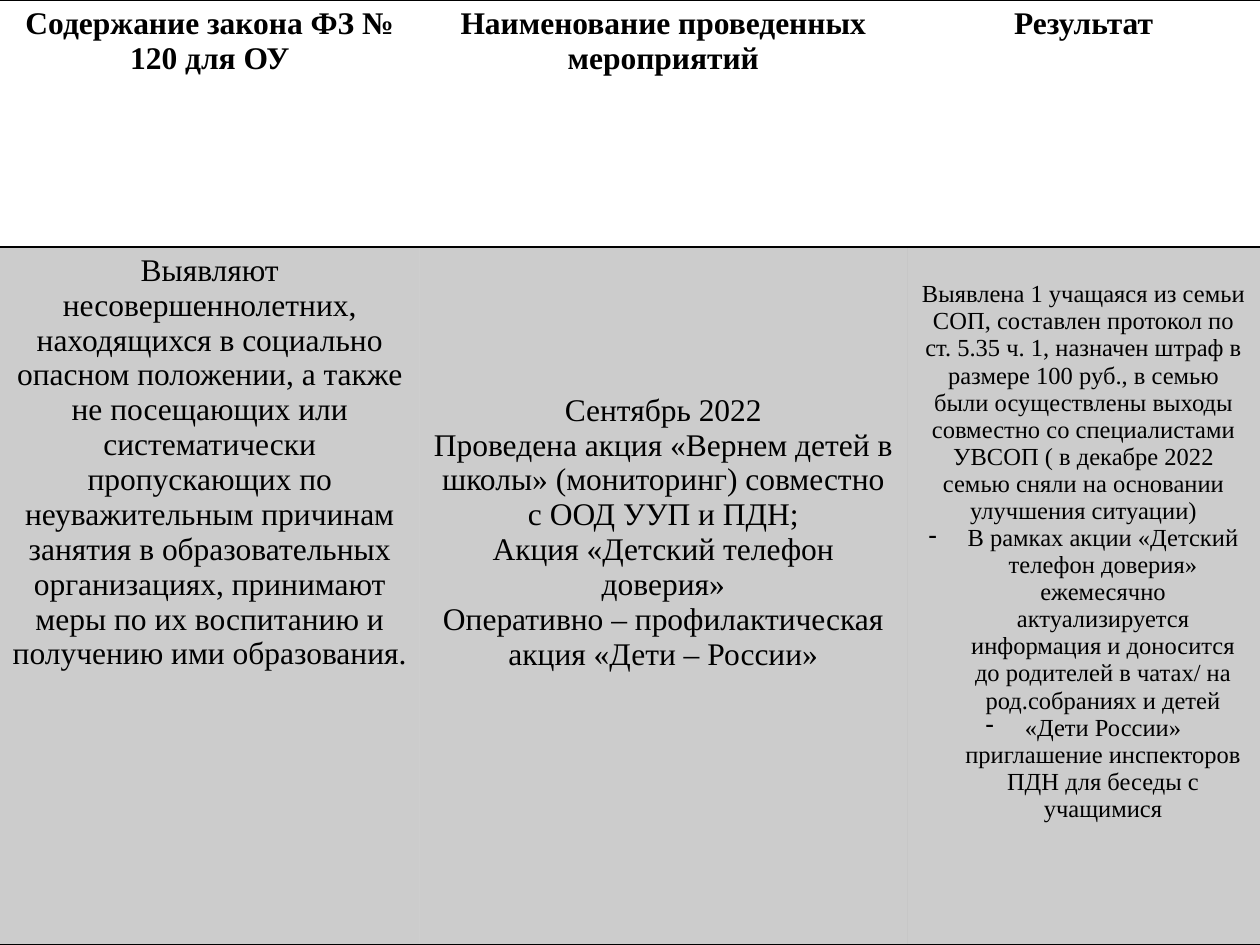
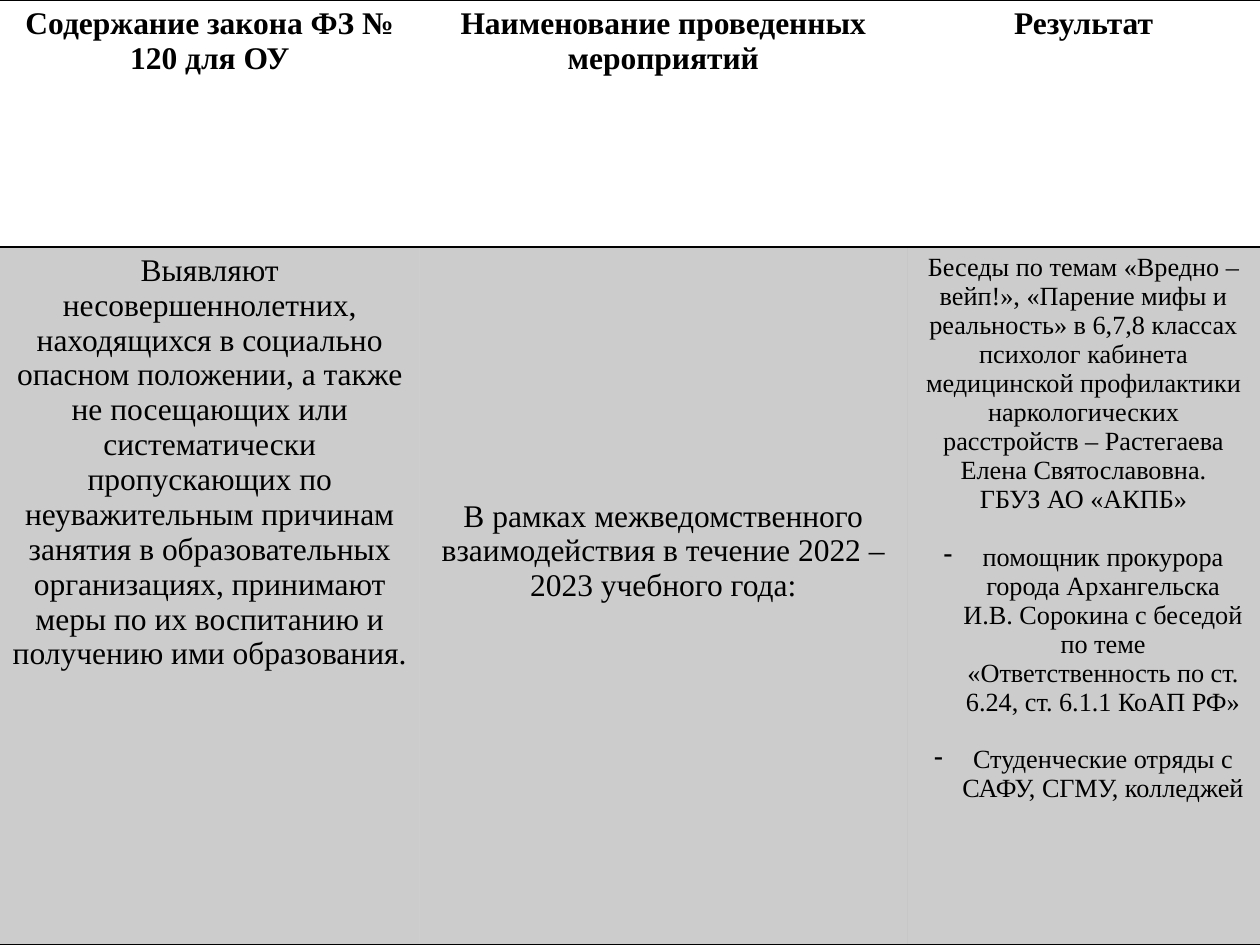
from lxml import etree
from pptx import Presentation
from pptx.dml.color import RGBColor
from pptx.enum import text
from pptx.oxml.ns import qn
from pptx.util import Inches, Pt

FONT = "Times New Roman"
BLACK = "000000"
NO_GRID_STYLE = "{2D5ABB26-0587-4C30-8999-92F81FD0307C}"
COLUMNS = [3.33, 3.87, 2.8]
ROWS = [1.96, 5.54]
SIZE = 18
TOP_MARGIN = 0.05
BULLET_INDENT = 0.31

HEADERS = [
    "Содержание закона ФЗ № 120 для ОУ",
    "Наименование проведенных мероприятий",
    "Результат",
]
LAW = (
    "Выявляют несовершеннолетних, находящихся в социально опасном положении, "
    "а также не посещающих или систематически пропускающих по неуважительным "
    "причинам занятия в образовательных организациях, принимают меры по их "
    "воспитанию и получению ими образования."
)
# Results starting with "- " become bulleted paragraphs.
SLIDES = [
    {
        "events": [
            "Сентябрь 2022",
            "Проведена акция «Вернем детей в школы» (мониторинг) совместно с ООД УУП и ПДН;",
            "Акция «Детский телефон доверия»",
            "Оперативно – профилактическая акция «Дети – России»",
        ],
        "events_top": 1.16,
        "results": [
            "Выявлена 1 учащаяся из семьи СОП, составлен протокол по ст. 5.35 ч. 1, "
            "назначен штраф в размере 100 руб., в семью были осуществлены выходы "
            "совместно со специалистами УВСОП ( в декабре 2022 семью сняли на "
            "основании улучшения ситуации)",
            "- В рамках акции «Детский телефон доверия» ежемесячно актуализируется "
            "информация и доносится до родителей в чатах/ на род.собраниях и детей",
            "- «Дети России» приглашение инспекторов ПДН для беседы с учащимися",
        ],
        "results_top": 0.27,
        "results_size": 14,
        "bullet_gap": 0,
    },
    {
        "events": [
            "В рамках межведомственного взаимодействия в течение 2022 – 2023 учебного года:",
        ],
        "events_top": 2.0,
        "results": [
            "Беседы по темам «Вредно – вейп!», «Парение мифы и реальность» в 6,7,8 "
            "классах психолог кабинета медицинской профилактики наркологических "
            "расстройств – Растегаева Елена Святославовна.",
            "ГБУЗ АО «АКПБ»",
            "- помощник прокурора города Архангельска И.В. Сорокина с беседой по теме "
            "«Ответственность по ст. 6.24, ст. 6.1.1 КоАП РФ»",
            "- Студенческие отряды с САФУ, СГМУ, колледжей",
        ],
        "results_top": TOP_MARGIN,
        "results_size": 15,
        "bullet_gap": 16.5,
    },
]


def rgb(color):
    return RGBColor.from_string(color)


def add_border(cell, side):
    line = etree.SubElement(cell._tc.get_or_add_tcPr(), qn(f"a:ln{side}"), w=str(Pt(1)))
    fill = etree.SubElement(line, qn("a:solidFill"))
    etree.SubElement(fill, qn("a:srgbClr"), val=BLACK)


def shade(cell):
    """Fill the cell with black at 20% opacity."""
    cell.fill.solid()
    cell.fill.fore_color.rgb = rgb(BLACK)
    color = cell._tc.tcPr.find(qn("a:solidFill")).find(qn("a:srgbClr"))
    etree.SubElement(color, qn("a:alpha"), val="20000")


def add_dash(p):
    pPr = p._p.get_or_add_pPr()
    pPr.set("marL", str(Inches(BULLET_INDENT)))
    pPr.set("indent", str(-Inches(BULLET_INDENT)))
    etree.SubElement(pPr, qn("a:buFontTx"))
    etree.SubElement(pPr, qn("a:buChar"), char="-")


def write_cell(cell, lines, size=SIZE, bold=False, top=TOP_MARGIN, bullet_gap=0):
    cell.margin_top = Inches(top)
    tf = cell.text_frame
    tf.text = "\n".join(line.removeprefix("- ") for line in lines)
    for p, line in zip(tf.paragraphs, lines):
        p.alignment = text.PP_ALIGN.CENTER
        if line.startswith("- "):
            if bullet_gap:
                p.space_before = Pt(bullet_gap)
            add_dash(p)
        for r in p.runs:
            r.font.name = FONT
            r.font.size = Pt(size)
            r.font.bold = bold
            r.font.color.rgb = rgb(BLACK)


def add_report_table(s):
    """Add the ruled table with its header row and the wording of the law."""
    frame = s.shapes.add_table(len(ROWS), len(COLUMNS), 0, 0,
                               Inches(sum(COLUMNS)), Inches(sum(ROWS)))
    table = frame.table
    table.first_row = table.horz_banding = False
    table._tbl.tblPr.find(qn("a:tableStyleId")).text = NO_GRID_STYLE
    for column, width in zip(table.columns, COLUMNS):
        column.width = Inches(width)
    for row, height in zip(table.rows, ROWS):
        row.height = Inches(height)
    for i, header in enumerate(HEADERS):
        head, body = table.cell(0, i), table.cell(1, i)
        for cell in (head, body):
            add_border(cell, "T")
            add_border(cell, "B")
        head.fill.background()
        shade(body)
        write_cell(head, [header], bold=True)
    write_cell(table.cell(1, 0), [LAW])
    return table


def main():
    prs = Presentation()
    prs.slide_width, prs.slide_height = Inches(10), Inches(7.5)
    for content in SLIDES:
        table = add_report_table(prs.slides.add_slide(prs.slide_layouts[6]))
        write_cell(table.cell(1, 1), content["events"], top=content["events_top"])
        write_cell(table.cell(1, 2), content["results"], size=content["results_size"],
                   top=content["results_top"], bullet_gap=content["bullet_gap"])
    prs.save("out.pptx")


if __name__ == "__main__":
    main()
